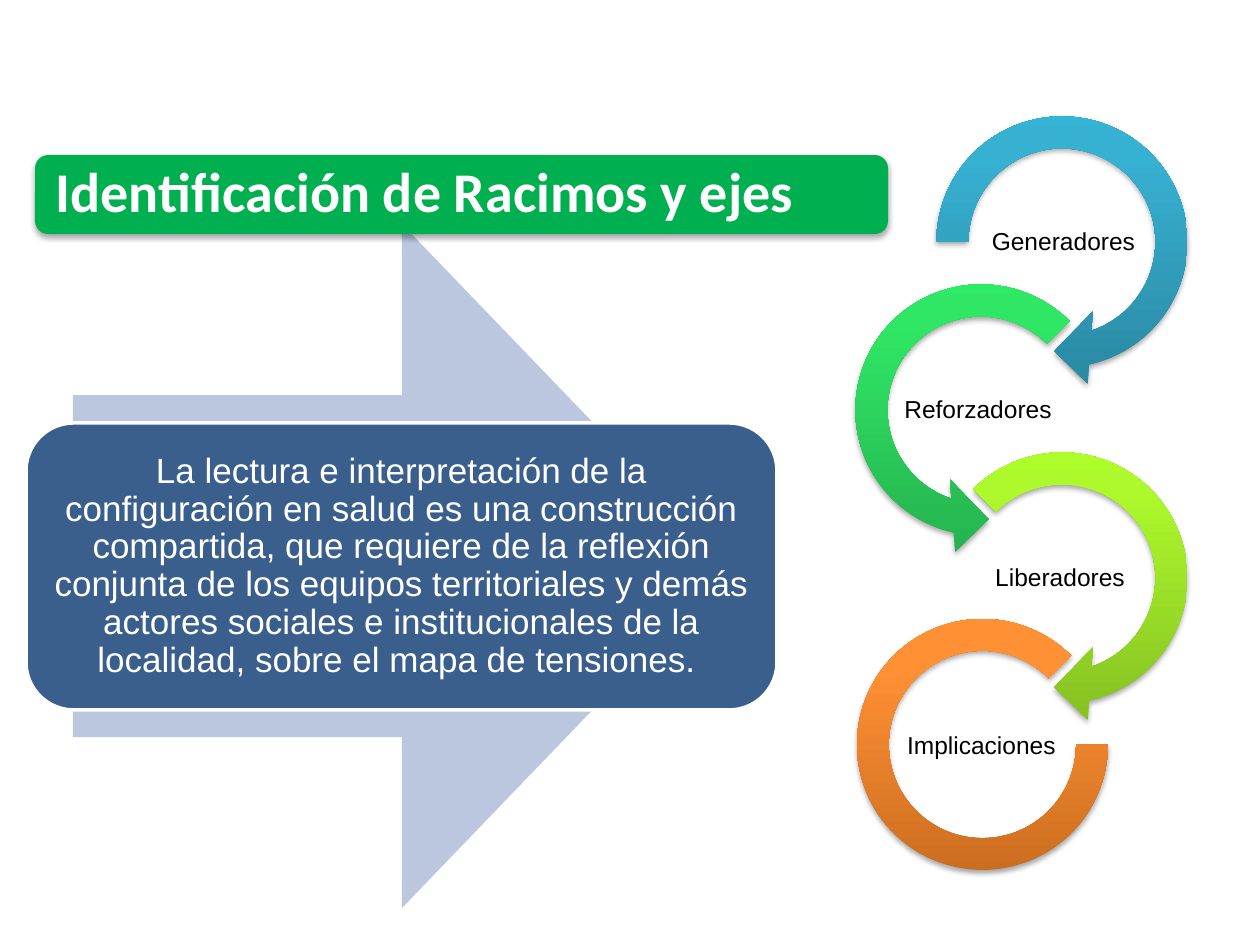
from lxml import etree
from pptx import Presentation
from pptx import util as u
from pptx.dml.color import RGBColor
from pptx.enum import shapes, text
from pptx.oxml.ns import qn

PX = 914400 / 126
COLORS = {"white": "FFFFFF", "black": "000000", "arrow": "BBC7DE",
          "message": "3A5F8C", "title": "00B050"}
KIND = shapes.MSO_SHAPE


def write(shape, words, size, font="Arial", color="white", bold=False,
          align=text.PP_ALIGN.CENTER, inset=10):
    frame = shape.text_frame
    frame.word_wrap = True
    frame.vertical_anchor = text.MSO_ANCHOR.MIDDLE
    frame.margin_left = frame.margin_right = int(inset * PX)
    frame.margin_top = frame.margin_bottom = int(inset * PX)
    paragraph = frame.paragraphs[0]
    paragraph.alignment = align
    paragraph.line_spacing = 0.9
    run = paragraph.add_run()
    run.text = words
    run.font.name, run.font.size, run.font.bold = font, u.Pt(size), bold
    run.font.color.rgb = RGBColor.from_string(COLORS[color])


def add_shape(kind, box, fill=None, gradient=None, adjustments=(), shadow=False):
    """Add a borderless shape; gradient lists its colours from bottom to top."""
    shape = slide.shapes.add_shape(kind, *[int(length * PX) for length in box])
    for index, value in enumerate(adjustments):
        shape.adjustments[index] = value
    if gradient:
        shape.fill.gradient()
        shape.fill.gradient_angle = 90
        stops = next(shape.element.spPr.iter(qn("a:gsLst")))
        for stop in list(stops):
            stops.remove(stop)
        for position, color in zip((0, 80000, 100000), gradient):
            stop = etree.SubElement(stops, qn("a:gs"), pos=str(position))
            etree.SubElement(stop, qn("a:srgbClr"), val=color)
    else:
        shape.fill.solid()
        shape.fill.fore_color.rgb = RGBColor.from_string(COLORS[fill])
    shape.line.fill.background()
    shape.shadow.inherit = False
    if shadow:
        effects = shape.element.spPr.find(qn("a:effectLst"))
        outer = etree.SubElement(effects, qn("a:outerShdw"), blurRad="40000",
                                 dist="23000", dir="5400000", rotWithShape="0")
        color = etree.SubElement(outer, qn("a:srgbClr"), val=COLORS["black"])
        etree.SubElement(color, qn("a:alpha"), val="35000")
    return shape


presentation = Presentation()
presentation.slide_width, presentation.slide_height = u.Inches(10), u.Inches(7.5)
slide = presentation.slides.add_slide(presentation.slide_layouts[6])

add_shape(KIND.RIGHT_ARROW, (73, 224, 658, 684), fill="arrow")
message = add_shape(KIND.ROUNDED_RECTANGLE, (26, 423, 751, 287), fill="message")
message.line.color.rgb = RGBColor.from_string(COLORS["white"])
message.line.width = u.Pt(2)
write(message, "La lectura e interpretación de la configuración en salud es una "
      "construcción compartida, que requiere de la reflexión conjunta de los "
      "equipos territoriales y demás actores sociales e institucionales de la "
      "localidad, sobre el mapa de tensiones. ", 20)

# Rings alternate right and left, one step lower each time
STEP = 168
RIGHT, LEFT = (916, 982), (835, 900)
rings = [
    ("Generadores", KIND.CIRCULAR_ARROW, RIGHT, (0.11, 11.42, 45, 108, 0.125),
     ("2A88A2", "37B1D2", "34B4D6")),
    ("Reforzadores ", KIND.LEFT_CIRCULAR_ARROW, LEFT, (0.11, 11.42, 63, 189, 0.125),
     ("25B24E", "30E765", "2DEB64")),
    ("Liberadores ", KIND.CIRCULAR_ARROW, RIGHT, (0.11, 11.42, 45, 135, 0.125),
     ("85C022", "ADF92C", "AFFE28")),
    ("Implicaciones", KIND.BLOCK_ARC, LEFT, (0, 189, 0.127),
     ("CC6E20", "FF9034", "FF9136")),
]
for row, (label, kind, (ring_left, label_left), adjustments, gradient) in enumerate(rings):
    box = (ring_left, 96 + row * STEP, 292, 292)
    if kind == KIND.BLOCK_ARC:
        box = (857, 619, 251, 251)
    add_shape(kind, box, gradient=gradient, adjustments=adjustments, shadow=True)
    label_box = (label_left, 202 + row * STEP, 163, 82)
    caption = slide.shapes.add_textbox(*[int(length * PX) for length in label_box])
    write(caption, label, 14, color="black", inset=1)

title = add_shape(KIND.ROUNDED_RECTANGLE, (35, 155, 853, 79), fill="title", shadow=True)
write(title, "Identificación de Racimos y ejes", 32, font="Calibri", bold=True,
      align=text.PP_ALIGN.LEFT, inset=17)

presentation.save("out.pptx")
